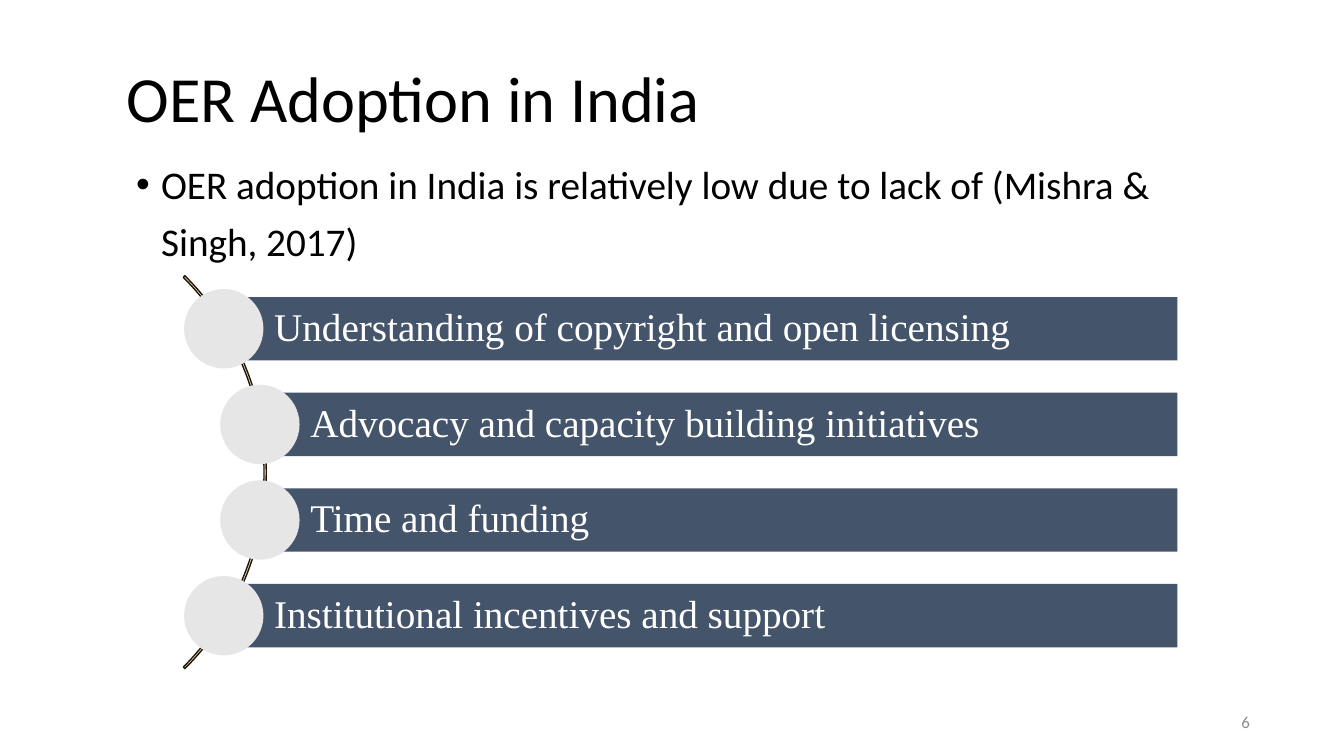
from dataclasses import dataclass

from lxml import etree
from pptx import Presentation
from pptx.dml.color import RGBColor
from pptx.enum.shapes import MSO_SHAPE
from pptx.enum.text import MSO_ANCHOR, PP_ALIGN
from pptx.oxml.ns import qn
from pptx.util import Cm, Pt

RECTANGLE = MSO_SHAPE.RECTANGLE
OVAL = MSO_SHAPE.OVAL
BLOCK_ARC = MSO_SHAPE.BLOCK_ARC
TOP, MIDDLE = MSO_ANCHOR.TOP, MSO_ANCHOR.MIDDLE
LEFT, RIGHT = PP_ALIGN.LEFT, PP_ALIGN.RIGHT

COLORS = {
    "text": "000000",
    "number": "8C8C8C",
    "arc": "211400",
    "bar": "44546A",
    "bar_text": "FFFFFF",
    "circle": "E7E6E6",
}

ARC_LEFT, ARC_TOP, ARC_SIZE = -7.29, 4.9, 14.0
ARC_MIDDLE = ARC_TOP + ARC_SIZE / 2
OUTER_LEFT, INNER_LEFT, BAR_RIGHT = 5.64, 6.55, 29.67
BAR_HEIGHT, BAR_PITCH, CIRCLE_SIZE = 1.6, 2.41, 2.0


@dataclass
class TextStyle:
    font: str
    size: float
    color: str
    line_spacing: float = 1.0
    anchor: MSO_ANCHOR = MIDDLE
    alignment: PP_ALIGN = LEFT


@dataclass
class Barrier:
    text: str
    left: float


TITLE_STYLE = TextStyle("Calibri", 46, "text", 0.9)
BODY_STYLE = TextStyle("Calibri", 28, "text", 1.2, TOP)
NUMBER_STYLE = TextStyle("Calibri", 12, "number", alignment=RIGHT)
BAR_STYLE = TextStyle("Times New Roman", 28, "bar_text", 0.9)

BARRIERS = [
    Barrier("Understanding of copyright and open licensing", OUTER_LEFT),
    Barrier("Advocacy and capacity building initiatives", INNER_LEFT),
    Barrier("Time and funding", INNER_LEFT),
    Barrier("Institutional incentives and support", OUTER_LEFT),
]


def rgb(name: str) -> RGBColor:
    return RGBColor.from_string(COLORS[name])


def write_text(shape, text: str, style: TextStyle):
    """Fill a shape with one styled paragraph and return that paragraph."""
    text_frame = shape.text_frame
    text_frame.word_wrap = True
    text_frame.vertical_anchor = style.anchor
    text_frame.text = text
    paragraph = text_frame.paragraphs[0]
    paragraph.alignment = style.alignment
    paragraph.line_spacing = style.line_spacing
    for run in paragraph.runs:
        run.font.name = style.font
        run.font.size = Pt(style.size)
        run.font.color.rgb = rgb(style.color)
    return paragraph


def add_text(slide, left: float, top: float, width: float, height: float,
             text: str, style: TextStyle):
    box = slide.shapes.add_textbox(Cm(left), Cm(top), Cm(width), Cm(height))
    return write_text(box, text, style)


def add_bullet(paragraph) -> None:
    properties = paragraph._p.get_or_add_pPr()
    properties.set("marL", str(Cm(1.27)))
    properties.set("indent", str(Cm(-0.63)))
    etree.SubElement(properties, qn("a:buFont")).set("typeface", "Arial")
    etree.SubElement(properties, qn("a:buChar")).set("char", "•")


def add_filled_shape(slide, kind: MSO_SHAPE, left: float, top: float,
                     width: float, height: float, color: str):
    shape = slide.shapes.add_shape(kind, Cm(left), Cm(top), Cm(width), Cm(height))
    shape.shadow.inherit = False
    shape.fill.solid()
    shape.fill.fore_color.rgb = rgb(color)
    shape.line.fill.background()
    return shape


def add_arc(slide) -> None:
    arc = slide.shapes.add_shape(BLOCK_ARC, Cm(ARC_LEFT), Cm(ARC_TOP),
                                 Cm(ARC_SIZE), Cm(ARC_SIZE))
    arc.shadow.inherit = False
    arc.fill.background()
    arc.line.color.rgb = rgb("arc")
    arc.line.width = Pt(1)
    for index, value in enumerate((189, 27, 0.004)):
        arc.adjustments[index] = value


def add_barrier(slide, barrier: Barrier, middle: float) -> None:
    """Draw a text bar with a circle centred on its left end."""
    bar = add_filled_shape(slide, RECTANGLE, barrier.left, middle - BAR_HEIGHT / 2,
                           BAR_RIGHT - barrier.left, BAR_HEIGHT, "bar")
    write_text(bar, barrier.text, BAR_STYLE)
    text_frame = bar.text_frame
    text_frame.margin_left = Cm(1.27)
    text_frame.margin_right = Cm(0.2)
    text_frame.margin_top = text_frame.margin_bottom = Cm(0.2)
    add_filled_shape(slide, OVAL, barrier.left - CIRCLE_SIZE / 2,
                     middle - CIRCLE_SIZE / 2, CIRCLE_SIZE, CIRCLE_SIZE, "circle")


def main() -> None:
    presentation = Presentation()
    presentation.slide_width = Cm(33.87)
    presentation.slide_height = Cm(19.05)
    slide = presentation.slides.add_slide(presentation.slide_layouts[6])

    add_text(slide, 2.95, 0.71, 28.4, 3.68, "OER Adoption in India", TITLE_STYLE)
    statement = add_text(
        slide, 2.54, 3.68, 29, 12.8,
        "OER adoption in India is relatively low due to lack of (Mishra & Singh, 2017)",
        BODY_STYLE)
    add_bullet(statement)
    add_text(slide, 23.93, 17.7, 7.82, 0.97, "6", NUMBER_STYLE)

    add_arc(slide)
    for index, barrier in enumerate(BARRIERS):
        offset = index - (len(BARRIERS) - 1) / 2
        add_barrier(slide, barrier, ARC_MIDDLE + offset * BAR_PITCH)

    presentation.save("out.pptx")


if __name__ == "__main__":
    main()
